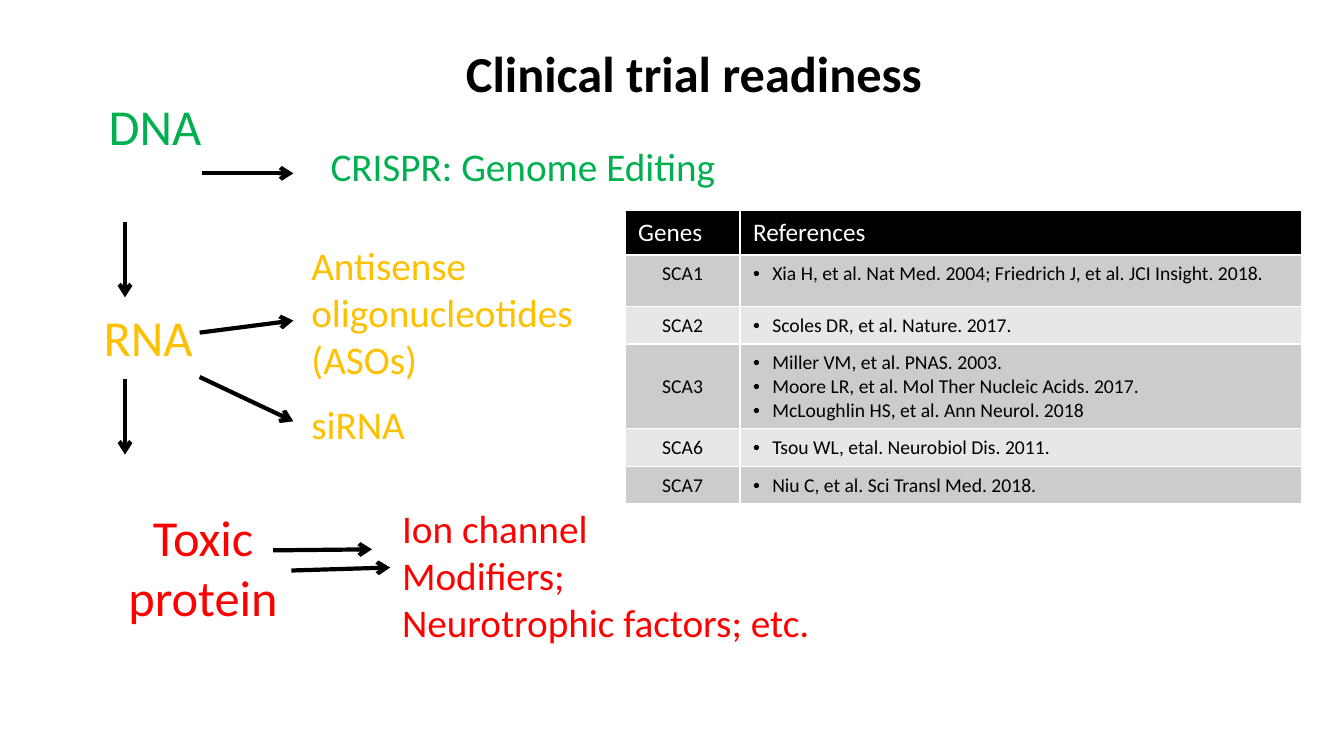
from dataclasses import dataclass

from lxml import etree
from pptx import Presentation
from pptx.dml.color import RGBColor
from pptx.enum.shapes import MSO_CONNECTOR
from pptx.enum.text import MSO_ANCHOR, PP_ALIGN
from pptx.oxml.ns import qn
from pptx.util import Inches, Pt

LEFT, CENTER = PP_ALIGN.LEFT, PP_ALIGN.CENTER
TOP, MIDDLE = MSO_ANCHOR.TOP, MSO_ANCHOR.MIDDLE
STRAIGHT = MSO_CONNECTOR.STRAIGHT
TITLE_ONLY = 5


@dataclass(frozen=True)
class Theme:
    font: str = "Calibri"
    ink: str = "000000"
    paper: str = "FFFFFF"
    dna: str = "00B050"
    rna: str = "FFC000"
    protein: str = "FF0000"
    bands: tuple = ("CCCCCC", "E7E7E7")
    stage: int = 36
    therapy: int = 28
    header: int = 18
    cell: int = 14
    arrow: int = 3
    border: int = 1


REFERENCES = [
    ("SCA1", ["Xia H, et al. Nat Med. 2004; Friedrich J, et al. JCI Insight. 2018."]),
    ("SCA2", ["Scoles DR, et al. Nature. 2017."]),
    ("SCA3", ["Miller VM, et al. PNAS. 2003.",
              "Moore LR, et al. Mol Ther Nucleic Acids. 2017.",
              "McLoughlin HS, et al. Ann Neurol. 2018"]),
    ("SCA6", ["Tsou WL, etal. Neurobiol Dis. 2011."]),
    ("SCA7", ["Niu C, et al. Sci Transl Med. 2018."]),
]
COL_WIDTHS = [1.14, 5.57]
ROW_HEIGHTS = [0.43, 0.51, 0.37, 0.83, 0.37, 0.37]

ARROWS = [
    (2, 1.72, 2.91, 1.72),
    (1.98, 3.3, 2.91, 3.18),
    (1.98, 3.74, 2.91, 4.18),
    (1.24, 2.2, 1.24, 2.95),
    (1.24, 3.76, 1.24, 4.51),
    (2.71, 5.46, 3.69, 5.45),
    (2.89, 5.66, 3.87, 5.63),
]


class SlideBuilder:
    def __init__(self, slide, theme):
        self.s = slide
        self.theme = theme

    def add_lines(self, tf, lines, size, color, align=LEFT, bold=False, bullet=False):
        for i, line in enumerate(lines):
            p = tf.paragraphs[0] if i == 0 else tf.add_paragraph()
            p.alignment = align
            if bullet:
                self.add_bullet(p)
            r = p.add_run()
            r.text = line
            values = {"name": self.theme.font, "size": Pt(size), "bold": bold}
            for name, value in values.items():
                setattr(r.font, name, value)
            r.font.color.rgb = RGBColor.from_string(color)

    def add_bullet(self, p):
        pPr = p._p.get_or_add_pPr()
        pPr.set("marL", str(Inches(0.19)))
        pPr.set("indent", str(Inches(-0.19)))
        etree.SubElement(pPr, qn("a:buFont"), typeface="Arial")
        etree.SubElement(pPr, qn("a:buChar"), char="•")

    def title(self, text, box):
        sp = self.s.shapes.title
        sp.left, sp.top, sp.width, sp.height = map(Inches, box)
        sp.text_frame.vertical_anchor = MIDDLE
        self.add_lines(sp.text_frame, [text], self.theme.stage, self.theme.ink, CENTER, bold=True)
        sp.text_frame.paragraphs[0].line_spacing = 0.9

    def label(self, lines, box, size, color, align=LEFT):
        tf = self.s.shapes.add_textbox(*map(Inches, box)).text_frame
        tf.word_wrap = True
        self.add_lines(tf, lines, size, color, align)

    def arrow(self, x1, y1, x2, y2):
        cx = self.s.shapes.add_connector(STRAIGHT, *map(Inches, (x1, y1, x2, y2)))
        cx.line.width = Pt(self.theme.arrow)
        cx.line.color.rgb = RGBColor.from_string(self.theme.ink)
        etree.SubElement(cx.line._get_or_add_ln(), qn("a:tailEnd"), type="arrow")
        etree.SubElement(cx._element.spPr, qn("a:effectLst"))

    def cell(self, cell, lines, size, color, fill, anchor=TOP, **style):
        margins = {"margin_left": 0.13, "margin_right": 0.13,
                   "margin_top": 0.07, "margin_bottom": 0.07}
        for name, value in margins.items():
            setattr(cell, name, Inches(value))
        cell.vertical_anchor = anchor
        self.add_lines(cell.text_frame, lines, size, color, **style)
        tcPr = cell._tc.get_or_add_tcPr()
        for side in ("lnL", "lnR", "lnT", "lnB"):
            ln = etree.SubElement(tcPr, qn(f"a:{side}"), w=str(Pt(self.theme.border)))
            solid = etree.SubElement(ln, qn("a:solidFill"))
            etree.SubElement(solid, qn("a:srgbClr"), val=self.theme.paper)
        cell.fill.solid()
        cell.fill.fore_color.rgb = RGBColor.from_string(fill)

    def reference_table(self, left, top):
        t = self.theme
        box = (left, top, sum(COL_WIDTHS), sum(ROW_HEIGHTS))
        table = self.s.shapes.add_table(
            len(ROW_HEIGHTS), len(COL_WIDTHS), *map(Inches, box)).table
        table.horz_banding = False
        for col, width in zip(table.columns, COL_WIDTHS):
            col.width = Inches(width)
        for row, height in zip(table.rows, ROW_HEIGHTS):
            row.height = Inches(height)
        for col, heading in enumerate(("Genes", "References")):
            self.cell(table.cell(0, col), [heading], t.header, t.paper, t.ink)
        for i, (gene, refs) in enumerate(REFERENCES):
            fill = t.bands[i % 2]
            anchor = MIDDLE if len(refs) > 1 else TOP
            self.cell(table.cell(i + 1, 0), [gene], t.cell, t.ink, fill, anchor, align=CENTER)
            self.cell(table.cell(i + 1, 1), refs, t.cell, t.ink, fill, anchor, bullet=True)


def main():
    prs = Presentation()
    prs.slide_width, prs.slide_height = Inches(13.33), Inches(7.5)
    t = Theme()
    b = SlideBuilder(prs.slides.add_slide(prs.slide_layouts[TITLE_ONLY]), t)

    b.title("Clinical trial readiness", (2.08, 0.46, 9.61, 0.6))
    b.label(["DNA"], (0.98, 0.89, 1.53, 0.78), t.stage, t.dna)
    b.label(["CRISPR: Genome Editing"], (3.18, 1.36, 5.51, 0.57), t.therapy, t.dna)
    b.label(["RNA"], (0.93, 2.99, 1.26, 0.71), t.stage, t.rna)
    b.label(["Antisense oligonucleotides (ASOs)"], (2.99, 2.34, 3.57, 1.51), t.therapy, t.rna)
    b.label(["siRNA"], (2.99, 3.92, 1.69, 0.57), t.therapy, t.rna)
    b.label(["Toxic protein"], (0.85, 4.97, 2.33, 1.31), t.stage, t.protein, CENTER)
    b.label(["Ion channel", "Modifiers;", "Neurotrophic factors; etc."],
            (3.89, 4.95, 6.08, 1.51), t.therapy, t.protein)
    b.reference_table(6.2, 2.09)
    for ends in ARROWS:
        b.arrow(*ends)

    prs.save("out.pptx")


if __name__ == "__main__":
    main()
